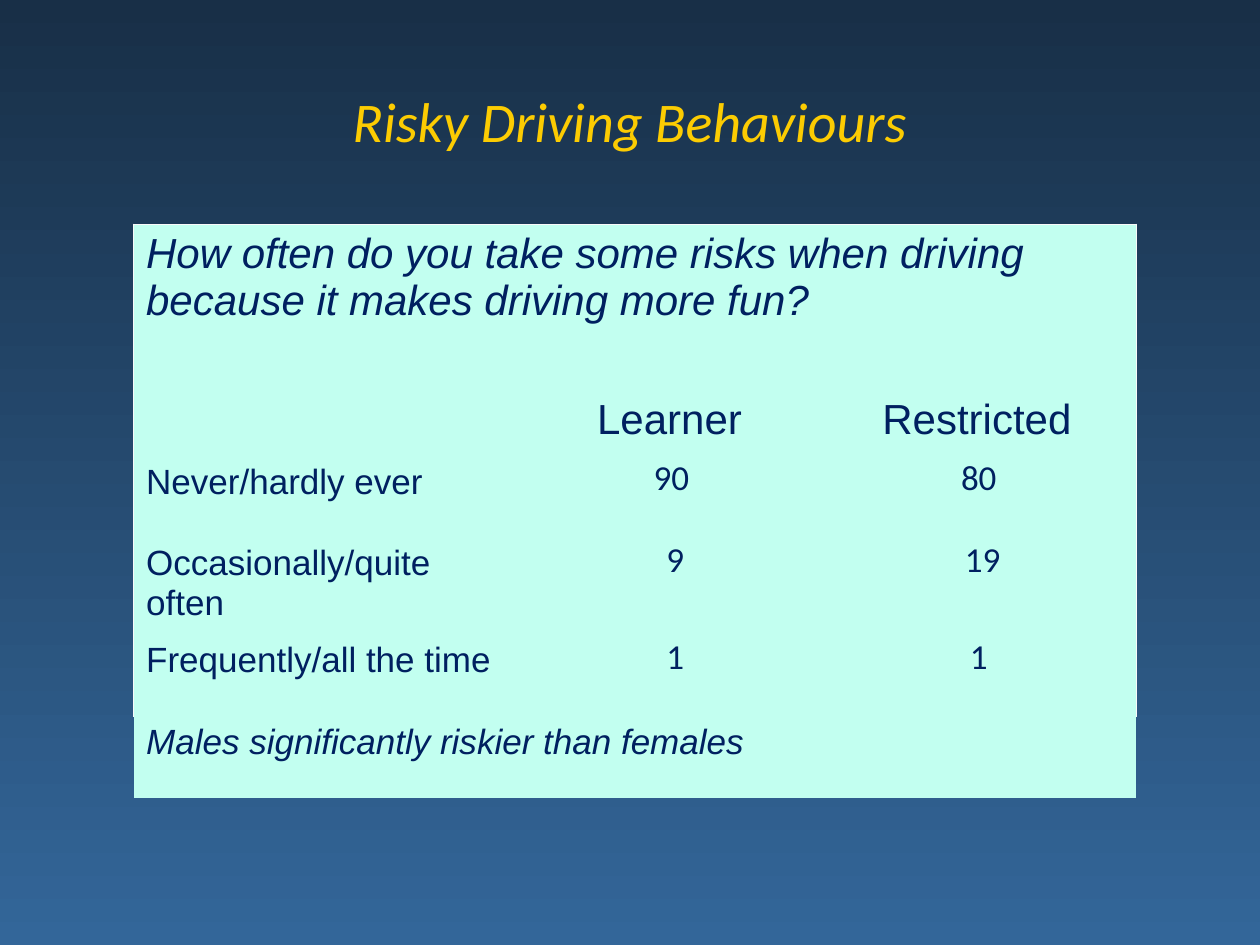
from dataclasses import dataclass

from lxml import etree
from pptx import Presentation
from pptx.dml.color import RGBColor
from pptx.enum.text import MSO_ANCHOR, PP_ALIGN
from pptx.oxml.ns import qn
from pptx.util import Inches, Pt

LEFT, MID = PP_ALIGN.LEFT, PP_ALIGN.CENTER
TOP, HALF = MSO_ANCHOR.TOP, MSO_ANCHOR.MIDDLE


@dataclass(frozen=True)
class Theme:
    dusk: str = "182F47"
    blue: str = "336699"
    gold: str = "FCCC02"
    navy: str = "002060"
    mint: str = "C2FFF0"
    edge: str = "F9F9F9"
    sans: str = "Arial"
    soft: str = "Calibri"
    title: int = 32
    head: int = 24
    body: int = 20
    line: float = 0.75


THEME = Theme()
ROWS = [
    ("Never/hardly ever", "90 ", "80 "),
    ("Occasionally/quite often", "9", "19"),
    ("Frequently/all the time", "1", "1 "),
]
COLS = [3.08, 2.44, 2.44]
TALL = [1.25, 0.59, 0.65, 0.72, 0.65, 0.65]


def apply(obj, form):
    for key, val in form.items():
        setattr(obj, key, val)


def write(frame, text, size, face, tint, slant=False, align=LEFT):
    para = frame.paragraphs[0]
    para.alignment = align
    run = para.add_run()
    run.text = text
    apply(run.font, {"size": Pt(size), "name": face, "italic": slant, "bold": False})
    run.font.color.rgb = RGBColor.from_string(tint)


def border(cell, sides):
    props = cell._tc.get_or_add_tcPr()
    for spot, side in enumerate("LRTB"):
        line = etree.Element(qn(f"a:ln{side}"), w=str(Pt(THEME.line)))
        if side in sides:
            fill = etree.SubElement(line, qn("a:solidFill"))
            etree.SubElement(fill, qn("a:srgbClr"), val=THEME.edge)
        else:
            etree.SubElement(line, qn("a:noFill"))
        props.insert(spot, line)


def paint(slide):
    fill = slide.background.fill
    fill.gradient()
    fill.gradient_angle = 270
    for stop, tint, spot in zip(fill.gradient_stops, (THEME.dusk, THEME.blue), (0, 1)):
        stop.color.rgb = RGBColor.from_string(tint)
        stop.position = spot


def add_title(slide, x, y, w, h):
    frame = slide.shapes.add_textbox(Inches(x), Inches(y), Inches(w), Inches(h)).text_frame
    apply(frame, {"word_wrap": True, "vertical_anchor": HALF})
    write(frame, "Risky Driving Behaviours", THEME.title, THEME.soft, THEME.gold, True, MID)


def style(grid):
    last = len(TALL) - 1
    for r in range(len(TALL)):
        for c in range(len(COLS)):
            cell = grid.cell(r, c)
            cell.fill.solid()
            cell.fill.fore_color.rgb = RGBColor.from_string(THEME.mint)
            wide = r in (0, last)
            sides = "T" if r == 0 else ""
            if r < last:
                sides += "L" if c == 0 else ""
                sides += "R" if c == 2 or wide else ""
            border(cell, sides)
            if c and not wide:
                thin = Inches(0.01)
                apply(cell, {
                    "margin_left": thin, "margin_top": thin,
                    "margin_right": thin, "margin_bottom": 0,
                    "vertical_anchor": HALF if r == 1 else TOP,
                })


def add_grid(slide, x, y):
    grid = slide.shapes.add_table(
        len(TALL), len(COLS), Inches(x), Inches(y), Inches(sum(COLS)), Inches(sum(TALL))
    ).table
    apply(grid, {"first_row": False, "horz_banding": False})
    for col, wide in zip(grid.columns, COLS):
        col.width = Inches(wide)
    for row, tall in zip(grid.rows, TALL):
        row.height = Inches(tall)
    style(grid)

    ask = "How often do you take some risks when driving because it makes driving more fun?"
    note = "Males significantly riskier than females"
    for r, text, size in ((0, ask, THEME.head), (len(TALL) - 1, note, THEME.body)):
        cell = grid.cell(r, 0)
        cell.merge(grid.cell(r, 2))
        write(cell.text_frame, text, size, THEME.sans, THEME.navy, True)

    for c, text in enumerate(("Learner ", "Restricted "), 1):
        write(grid.cell(1, c).text_frame, text, THEME.head, THEME.sans, THEME.navy, align=MID)
    for r, row in enumerate(ROWS, 2):
        for c, text in enumerate(row):
            face, align = (THEME.soft, MID) if c else (THEME.sans, LEFT)
            write(grid.cell(r, c).text_frame, text, THEME.body, face, THEME.navy, align=align)


def main():
    deck = Presentation()
    apply(deck, {"slide_width": Inches(10), "slide_height": Inches(7.5)})
    slide = deck.slides.add_slide(deck.slide_layouts[6])
    paint(slide)
    add_title(slide, 0.51, 0.33, 8.98, 1.25)
    add_grid(slide, 1.06, 1.78)
    deck.save("out.pptx")


if __name__ == "__main__":
    main()
